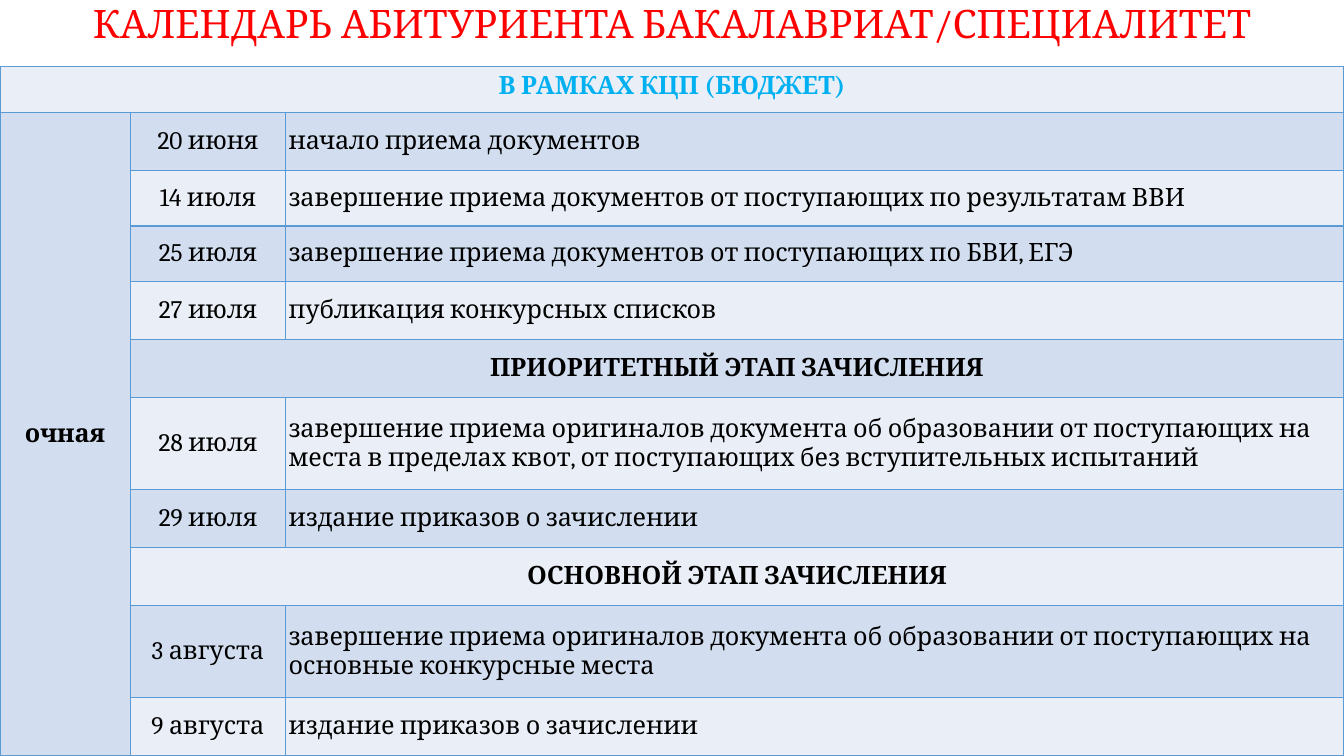
from lxml.etree import SubElement
from pptx import Presentation
from pptx.dml.color import RGBColor
from pptx.enum.text import MSO_ANCHOR, MSO_AUTO_SIZE, PP_ALIGN
from pptx.oxml.ns import qn
from pptx.util import Pt

RED = RGBColor(0xFF, 0x00, 0x00)
BLACK = RGBColor(0x00, 0x00, 0x00)
SKY = RGBColor(0x00, 0xB0, 0xF0)
BORDER = RGBColor(0x5B, 0x9B, 0xD5)
LIGHT = RGBColor(0xEA, 0xEF, 0xF7)
DARK = RGBColor(0xD2, 0xDE, 0xEF)
FONT = "Cambria"

WIDTH, HEIGHT = 960, 540
TABLE_TOP = 47.5
COLUMN_WIDTHS = [93, 111, 756]
HEADER_HEIGHT = 33

# Row height, date (empty for a stage heading), event
EVENTS = [
    (41.4, "20 июня", "начало приема документов"),
    (39.6, "14 июля", "завершение приема документов от поступающих по результатам ВВИ"),
    (39.6, "25 июля", "завершение приема документов от поступающих по БВИ, ЕГЭ"),
    (41.4, "27 июля", "публикация конкурсных списков"),
    (41.4, "", "ПРИОРИТЕТНЫЙ ЭТАП ЗАЧИСЛЕНИЯ"),
    (65.8, "28 июля", "завершение приема оригиналов документа об образовании от поступающих "
                      "на места в пределах квот, от поступающих без вступительных испытаний"),
    (41.4, "29 июля", "издание приказов о зачислении"),
    (41.4, "", "ОСНОВНОЙ ЭТАП ЗАЧИСЛЕНИЯ"),
    (65.8, "3 августа", "завершение приема оригиналов документа об образовании от поступающих "
                        "на основные конкурсные места"),
    (41.4, "9 августа", "издание приказов о зачислении"),
]


def write(frame, text, size, color, bold=False, align=PP_ALIGN.CENTER):
    frame.text = text
    para = frame.paragraphs[0]
    para.alignment = align
    font = para.runs[0].font
    font.name, font.size, font.bold = FONT, Pt(size), bold
    font.color.rgb = color


def add_borders(cell):
    properties = cell._tc.get_or_add_tcPr()
    for side in ("a:lnL", "a:lnR", "a:lnT", "a:lnB"):
        line = SubElement(properties, qn(side), w=str(Pt(1)))
        fill = SubElement(line, qn("a:solidFill"))
        SubElement(fill, qn("a:srgbClr"), val=str(BORDER))


deck = Presentation()
deck.slide_width, deck.slide_height = Pt(WIDTH), Pt(HEIGHT)
page = deck.slides.add_slide(deck.slide_layouts[5])

# Title
title = page.shapes.title
title.left, title.top, title.width, title.height = Pt(0), Pt(0), Pt(WIDTH), Pt(36.7)
title.text_frame.auto_size = MSO_AUTO_SIZE.NONE
title.text_frame.vertical_anchor = MSO_ANCHOR.MIDDLE
write(title.text_frame, "КАЛЕНДАРЬ АБИТУРИЕНТА БАКАЛАВРИАТ/СПЕЦИАЛИТЕТ", 28, RED)
title.text_frame.paragraphs[0].line_spacing = 0.9

# Table grid
row_heights = [HEADER_HEIGHT] + [height for height, date, event in EVENTS]
calendar = page.shapes.add_table(
    len(row_heights), len(COLUMN_WIDTHS),
    Pt(0), Pt(TABLE_TOP), Pt(WIDTH), Pt(sum(row_heights))).table
for column, width in zip(calendar.columns, COLUMN_WIDTHS):
    column.width = Pt(width)
for row, height in zip(calendar.rows, row_heights):
    row.height = Pt(height)

# Borders and alternating fills; the study form column stays dark
for row_number, row in enumerate(calendar.rows):
    for column_number, cell in enumerate(row.cells):
        add_borders(cell)
        dark = row_number % 2 or (row_number and column_number == 0)
        cell.fill.solid()
        cell.fill.fore_color.rgb = DARK if dark else LIGHT

# Header and study form
header = calendar.cell(0, 0)
header.merge(calendar.cell(0, 2))
write(header.text_frame, "В РАМКАХ КЦП (БЮДЖЕТ)", 18, SKY, bold=True)
study_form = calendar.cell(1, 0)
study_form.merge(calendar.cell(len(EVENTS), 0))
study_form.vertical_anchor = MSO_ANCHOR.MIDDLE
write(study_form.text_frame, "очная", 18, BLACK, bold=True)

# Dates, events and stage headings
for row_number, (height, date, event) in enumerate(EVENTS, start=1):
    date_cell, event_cell = calendar.cell(row_number, 1), calendar.cell(row_number, 2)
    for cell in (date_cell, event_cell):
        cell.vertical_anchor = MSO_ANCHOR.MIDDLE
        cell.margin_left = cell.margin_right = Pt(2.2)
        cell.margin_top = cell.margin_bottom = Pt(7.2)
    if date:
        write(date_cell.text_frame, date, 18, BLACK)
        write(event_cell.text_frame, event, 18, BLACK, align=PP_ALIGN.LEFT)
    else:
        date_cell.merge(event_cell)
        write(date_cell.text_frame, event, 18, BLACK, bold=True)

deck.save("out.pptx")
